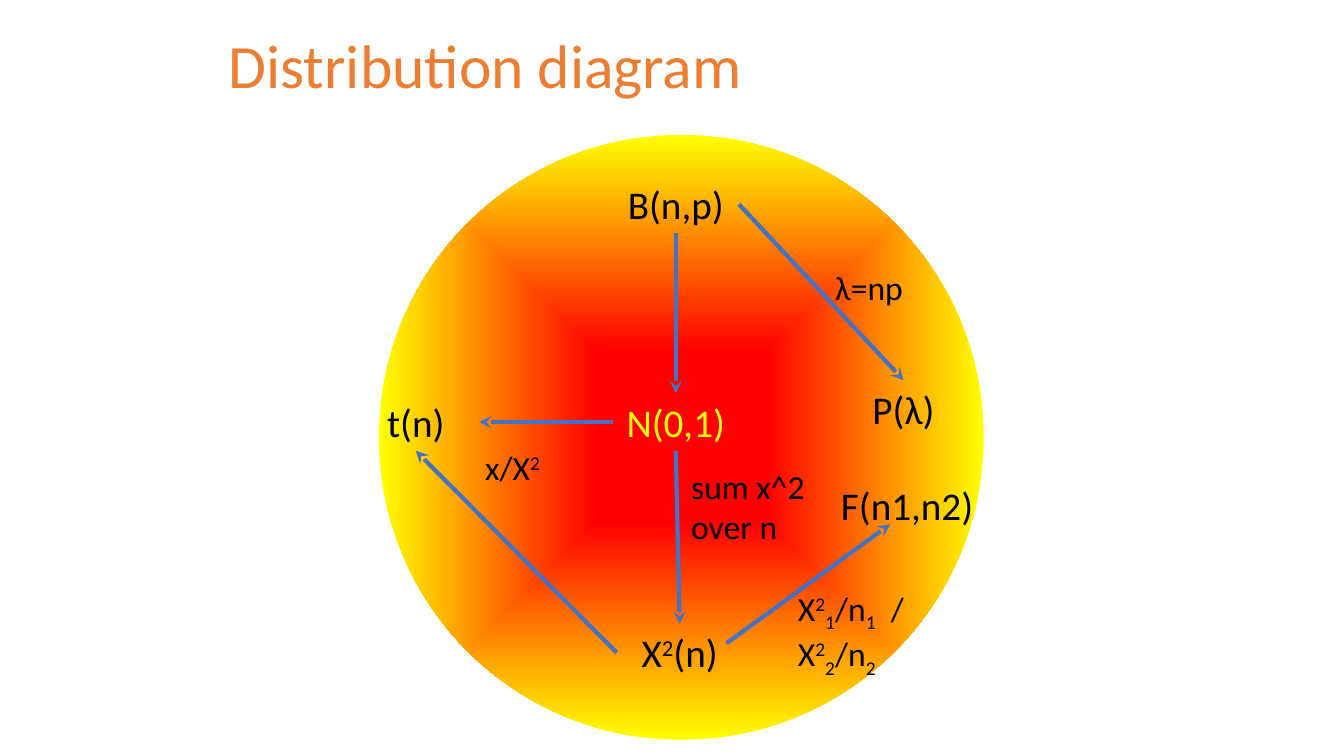
from pptx import Presentation
from pptx.dml.color import RGBColor
from pptx.enum.shapes import MSO_CONNECTOR, MSO_SHAPE
from pptx.enum.text import MSO_ANCHOR, PP_ALIGN
from pptx.oxml import parse_xml
from pptx.oxml.ns import nsdecls, qn
from pptx.util import Cm, Pt
from lxml import etree

STRAIGHT = MSO_CONNECTOR.STRAIGHT
OVAL = MSO_SHAPE.OVAL
MIDDLE, TOP_ANCHOR = MSO_ANCHOR.MIDDLE, MSO_ANCHOR.TOP
LEFT, CENTER, RIGHT = PP_ALIGN.LEFT, PP_ALIGN.CENTER, PP_ALIGN.RIGHT
TOP_SIDE, LEFT_SIDE, BOTTOM_SIDE, RIGHT_SIDE = range(4)

FONT = "Calibri"
COLORS = {"title": "ED7D31", "text": "000000", "normal": "FFFF00",
          "core": "FF0000", "rim": "FFFF00", "arrow": "4472C4"}
SUP, SUB = 30000, -25000
NODE_W, NODE_H = 3.18, 1.45

# Name: left, top (cm from the disc's corner), width, runs, colour
NODES = {
    "normal": (5.89, 6.51, NODE_W, [("N(0,1)", 0)], "normal"),
    "binomial": (5.89, 1.02, NODE_W, [("B(n,p)", 0)], "text"),
    "poisson": (11.63, 6.18, NODE_W, [("P(λ)", 0)], "text"),
    "student": (-0.66, 6.51, NODE_W, [("t(n)", 0)], "text"),
    "chi": (5.99, 12.32, NODE_W, [("X", 0), ("2", SUP), ("(n)", 0)], "text"),
    "fisher": (11.1, 8.61, 4.42, [("F(n1,n2)", 0)], "text"),
}
LINKS = [
    ("binomial", RIGHT_SIDE, "poisson", TOP_SIDE),
    ("binomial", BOTTOM_SIDE, "normal", TOP_SIDE),
    ("normal", BOTTOM_SIDE, "chi", TOP_SIDE),
    ("chi", LEFT_SIDE, "student", BOTTOM_SIDE),
    ("normal", LEFT_SIDE, "student", RIGHT_SIDE),
]
FISHER_ARROW = (8.76, 12.81, 12.88, 9.81)


def chi_over_n(index, ending=""):
    runs = [("X", 0), ("2", SUP), (index, SUB), ("/n", 0), (index, SUB)]
    return runs + [(ending, 0)] if ending else runs


# Left, top, width, height, alignment, paragraphs
LABELS = [
    (7.62, 8.21, 4.24, 2.31, LEFT, [[("sum x^2", 0)], [("over n", 0)]]),
    (10.31, 11.28, 6.71, 2.31, LEFT, [chi_over_n("1", "  /"), chi_over_n("2")]),
    (1.8, 7.73, 2.51, 1.27, RIGHT, [[("x/X", 0), ("2", SUP)]]),
    (11.25, 3.2, 4.24, 1.27, LEFT, [[("λ=np", 0)]]),
]


def add_text(slide, box, paragraphs, size, color, align=LEFT, anchor=TOP_ANCHOR):
    holder = slide.shapes.add_textbox(*map(Cm, box))
    frame = holder.text_frame
    frame.word_wrap = True
    frame.vertical_anchor = anchor
    for number, runs in enumerate(paragraphs):
        paragraph = frame.add_paragraph() if number else frame.paragraphs[0]
        paragraph.alignment = align
        paragraph.font.name = FONT
        paragraph.font.size = Pt(size)
        paragraph.font.color.rgb = RGBColor.from_string(COLORS[color])
        for text, baseline in runs:
            run = paragraph.add_run()
            run.text = text
            if baseline:
                run._r.get_or_add_rPr().set("baseline", str(baseline))
    return holder


def add_arrow(slide, start_x=0, start_y=0, end_x=0, end_y=0):
    arrow = slide.shapes.add_connector(
        STRAIGHT, Cm(start_x), Cm(start_y), Cm(end_x), Cm(end_y))
    arrow.line.color.rgb = RGBColor.from_string(COLORS["arrow"])
    arrow.line.width = Pt(3)
    etree.SubElement(arrow.line._get_or_add_ln(), qn("a:tailEnd"), type="stealth")
    etree.SubElement(arrow._element.spPr, qn("a:effectLst"))
    return arrow


def add_disc(slide, left, top, size):
    disc = slide.shapes.add_shape(OVAL, Cm(left), Cm(top), Cm(size), Cm(size))
    disc.shadow.inherit = False
    disc.line.fill.background()
    stops = "".join(
        f'<a:gs pos="{position}"><a:srgbClr val="{COLORS[color]}"/></a:gs>'
        for position, color in ((0, "core"), (28000, "core"), (100000, "rim")))
    gradient = parse_xml(
        f'<a:gradFill {nsdecls("a")} rotWithShape="1"><a:gsLst>{stops}</a:gsLst>'
        '<a:path path="shape"><a:fillToRect l="50000" t="50000" r="50000" b="50000"/>'
        '</a:path></a:gradFill>')
    disc._element.spPr.find(qn("a:prstGeom")).addnext(gradient)


def add_title(slide, box):
    title = add_text(slide, box, [[("Distribution diagram", 0)]], 44, "title",
                     anchor=MIDDLE)
    title.text_frame.paragraphs[0].line_spacing = 0.9


def add_diagram(slide, left, top, size):
    add_disc(slide, left, top, size)

    # Distributions
    nodes = {}
    for name, (x, y, width, runs, color) in NODES.items():
        nodes[name] = add_text(slide, (left + x, top + y, width, NODE_H),
                               [runs], 28, color, CENTER)

    # Arrows between distributions
    for source, source_side, target, target_side in LINKS:
        arrow = add_arrow(slide)
        arrow.begin_connect(nodes[source], source_side)
        arrow.end_connect(nodes[target], target_side)
    x1, y1, x2, y2 = FISHER_ARROW
    add_arrow(slide, left + x1, top + y1, left + x2, top + y2)

    # Transformations beside the arrows
    for x, y, width, height, align, paragraphs in LABELS:
        add_text(slide, (left + x, top + y, width, height), paragraphs,
                 24, "text", align)


def main():
    deck = Presentation()
    deck.slide_width, deck.slide_height = Cm(33.87), Cm(19.05)
    slide = deck.slides.add_slide(deck.slide_layouts[6])
    add_title(slide, (5.51, 0.46, 22.86, 2.54))
    add_diagram(slide, 9.55, 3.4, 15.24)
    deck.save("out.pptx")


if __name__ == "__main__":
    main()
